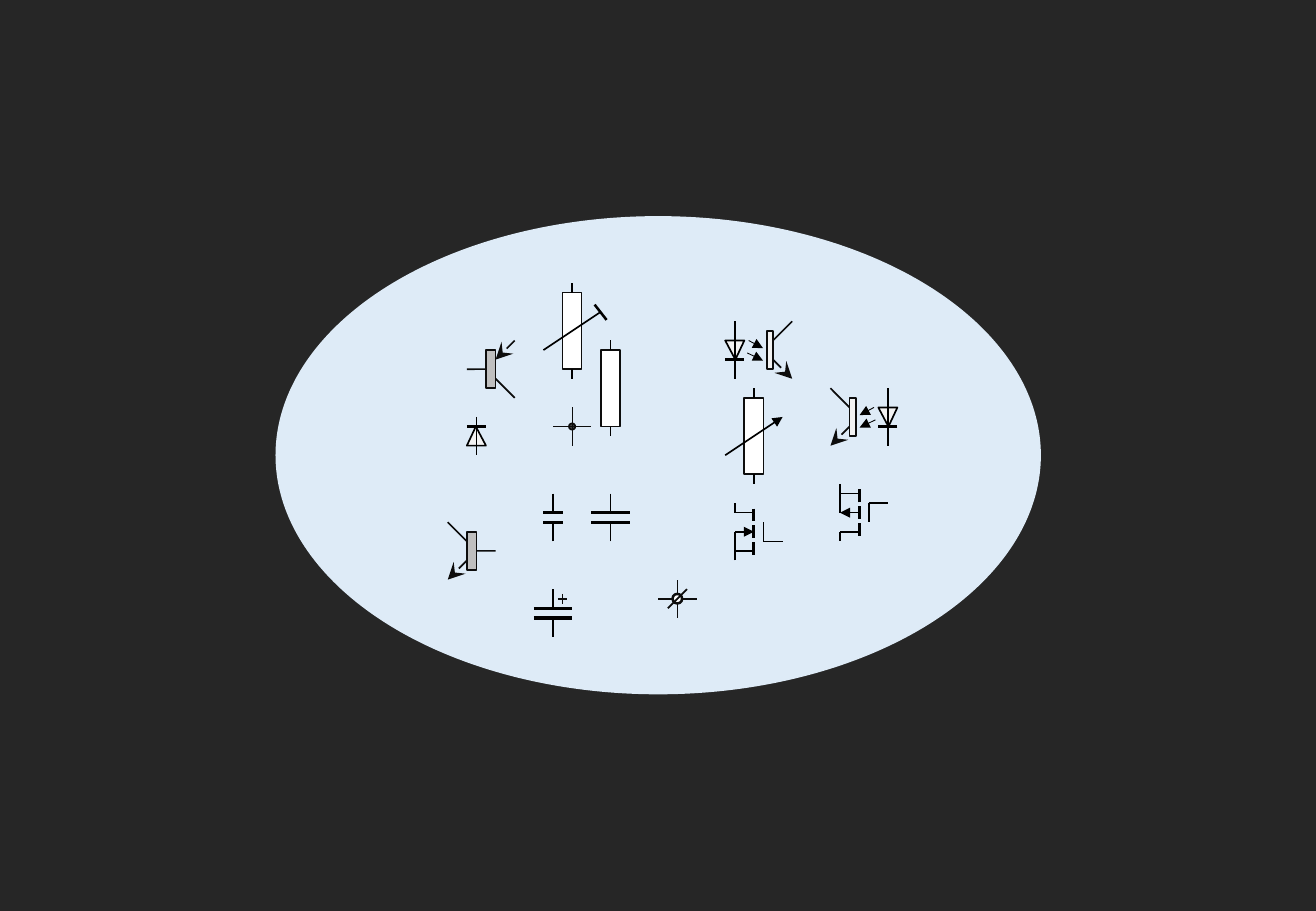
from lxml.etree import SubElement
from pptx import Presentation
from pptx.dml.color import RGBColor
from pptx.enum.shapes import MSO_CONNECTOR, MSO_SHAPE
from pptx.oxml.ns import qn
from pptx.util import Cm, Pt

COLORS = {
    "background": "262626",
    "panel": "DEEBF7",
    "black": "000000",
    "ink": "0D0D0D",
    "white": "FFFFFF",
    "pale": "F2F2F2",
    "gray": "BFBFBF",
    "dot": "404040",
}
GRID = 0.2
OFFSET_X, OFFSET_Y = 0.16, 0.12
TOP, LEFT, BOTTOM, RIGHT = range(4)


def color(name):
    """Return the named colour."""
    return RGBColor.from_string(COLORS[name])


class Symbol:
    """A group of lines and shapes placed in grid steps around an origin."""

    def __init__(self, slide, column, row, flip_x=1, flip_y=1):
        """Start an empty group at a grid position."""
        self.shapes = slide.shapes.add_group_shape().shapes
        self.column, self.row = column, row
        self.flip_x, self.flip_y = flip_x, flip_y

    def point(self, x, y):
        """Convert grid steps from the origin into slide lengths."""
        return (Cm(OFFSET_X + GRID * (self.column + self.flip_x * x)),
                Cm(OFFSET_Y + GRID * (self.row + self.flip_y * y)))

    def line(self, start, end, width=1, ink="black", head=None, tail=None, size="med"):
        """Draw a straight line with optional arrowheads."""
        connector = self.shapes.add_connector(
            MSO_CONNECTOR.STRAIGHT, *self.point(*start), *self.point(*end))
        connector.line.width = Pt(width)
        connector.line.color.rgb = color(ink)
        properties = connector.line._get_or_add_ln()
        for tag, kind in (("a:headEnd", head), ("a:tailEnd", tail)):
            if kind:
                SubElement(properties, qn(tag), type=kind, w=size, len=size)
        SubElement(connector._element.spPr, qn("a:effectLst"))
        return connector

    def shape(self, kind, start, end, fill, ink="ink", width=1):
        """Draw an outlined shape between two opposite corners."""
        first, second = self.point(*start), self.point(*end)
        left, right = sorted((first[0], second[0]))
        top, bottom = sorted((first[1], second[1]))
        shape = self.shapes.add_shape(kind, left, top, right - left, bottom - top)
        shape.shadow.inherit = False
        shape.fill.solid()
        shape.fill.fore_color.rgb = color(fill)
        shape.line.color.rgb = color(ink)
        shape.line.width = Pt(width)
        return shape


def draw_panel(slide):
    """Draw the pale ellipse behind the symbols."""
    panel = slide.shapes.add_shape(MSO_SHAPE.OVAL, Cm(5.76), Cm(4.52), Cm(16), Cm(10))
    panel.shadow.inherit = False
    panel.fill.solid()
    panel.fill.fore_color.rgb = color("panel")
    panel.line.fill.background()


def draw_resistor(symbol):
    """Draw a resistor with joined leads."""
    body = symbol.shape(MSO_SHAPE.RECTANGLE, (-1, -4), (1, 4), "white")
    symbol.line((0, -5), (0, -4)).end_connect(body, TOP)
    symbol.line((0, 5), (0, 4)).end_connect(body, BOTTOM)


def draw_potentiometer(symbol):
    """Draw a resistor crossed by an adjusting arrow."""
    draw_resistor(symbol)
    symbol.line((-3, 2), (3, -2), tail="triangle")


def draw_trimmer(symbol):
    """Draw a resistor crossed by a preset adjuster."""
    draw_resistor(symbol)
    symbol.line((-3, 2), (3, -2))
    symbol.line((2.35, -2.75), (3.6, -1.15), width=1.5)


def draw_capacitor(symbol, half_width, polarized=False):
    """Draw two plates with leads, and a plus sign when polarized."""
    for plate, lead_end in ((0, -2), (1, 3)):
        symbol.line((-half_width, plate), (half_width, plate), width=2)
        symbol.line((0, lead_end), (0, plate))
    if polarized:
        symbol.line((1, -1.5), (1, -0.5), ink="ink")
        symbol.line((0.5, -1), (1.5, -1), ink="ink")


def draw_diode(symbol, bar, base, lead):
    """Draw a diode whose triangle points from its base to the bar."""
    triangle = symbol.shape(MSO_SHAPE.ISOSCELES_TRIANGLE, (-1, bar), (1, base),
                            "pale", ink="black")
    triangle.adjustments[0] = 0.47
    if base < bar:
        triangle.rotation = 180
    symbol.line((-1, bar), (1, bar), width=2)
    symbol.line((0, min(bar, base) - lead), (0, max(bar, base) + lead))


def draw_transistor_body(symbol, edge, side, width, fill, arrow="head"):
    """Draw the slanted collector and emitter and the base bar."""
    outer = edge + 2 * side
    symbol.line((outer, -3), (edge, -1), ink="ink")
    symbol.line((outer, 3), (edge, 1), ink="ink", size="lg", **{arrow: "stealth"})
    return symbol.shape(MSO_SHAPE.RECTANGLE, (edge, -2), (edge - side * width, 2), fill)


def draw_transistor(symbol, arrow):
    """Draw a bipolar transistor with a base lead."""
    body = draw_transistor_body(symbol, 0, -1, 1, "gray", arrow)
    lead = symbol.line((1, 0), (3, 0), ink="ink")
    lead.begin_connect(body, RIGHT if symbol.flip_x > 0 else LEFT)


def draw_optocoupler(symbol):
    """Draw a diode that shines on a phototransistor."""
    draw_diode(symbol, bar=1, base=-1, lead=2)
    draw_transistor_body(symbol, 4, 1, 0.65, "pale")
    symbol.line((1.45, -1), (2.95, -0.2), width=0.5, tail="triangle")
    symbol.line((1.3, 0.3), (2.95, 1.1), width=0.5, tail="triangle")


def draw_mosfet(symbol, arrow):
    """Draw a field-effect transistor with a broken channel."""
    for start, end in (((0, -2), (0, -3)), ((0, 3), (0, 0)), ((3, 1), (3, -1)),
                       ((0, 2), (2, 2)), ((0, -2), (2, -2)), ((3, 1), (5, 1))):
        symbol.line(start, end)
    for middle in (-1.75, 0, 1.75):
        symbol.line((2, middle - 0.67), (2, middle + 0.67), width=1.75)
    symbol.line((0, 0), (2, 0), **{arrow: "triangle"})


def draw_spokes(symbol, inner, outer, width):
    """Draw four lines outwards from a point."""
    for x, y in ((1, 0), (0, 1), (-1, 0), (0, -1)):
        symbol.line((x * inner, y * inner), (x * outer, y * outer), width, "ink")


def draw_junction(symbol):
    """Draw crossing wires joined by a dot."""
    symbol.shape(MSO_SHAPE.OVAL, (-0.33, -0.33), (0.33, 0.33), "dot")
    draw_spokes(symbol, 0, 2, 0.5)


def draw_terminal(symbol):
    """Draw a ring with four leads and a diagonal stroke."""
    symbol.shape(MSO_SHAPE.OVAL, (-0.5, -0.5), (0.5, 0.5), "white", width=1.5)
    symbol.line((1, -1), (-1, 1), ink="ink")
    draw_spokes(symbol, 0.5, 2, 1)


def main():
    """Build the slide of circuit symbols."""
    presentation = Presentation()
    presentation.slide_width, presentation.slide_height = Cm(27.51), Cm(19.05)
    slide = presentation.slides.add_slide(presentation.slide_layouts[6])
    slide.background.fill.solid()
    slide.background.fill.fore_color.rgb = color("background")

    draw_panel(slide)
    draw_transistor(Symbol(slide, 51, 38, flip_x=-1, flip_y=-1), arrow="tail")
    draw_capacitor(Symbol(slide, 63, 53), half_width=2)
    draw_mosfet(Symbol(slide, 76, 55), arrow="tail")
    draw_potentiometer(Symbol(slide, 78, 45))
    draw_trimmer(Symbol(slide, 59, 34))
    draw_diode(Symbol(slide, 49, 44), bar=0, base=2, lead=1)
    draw_capacitor(Symbol(slide, 57, 53), half_width=1)
    draw_capacitor(Symbol(slide, 57, 63), half_width=2, polarized=True)
    draw_resistor(Symbol(slide, 63, 40))
    draw_transistor(Symbol(slide, 48, 57), arrow="head")
    draw_optocoupler(Symbol(slide, 92, 43, flip_x=-1))
    draw_mosfet(Symbol(slide, 87, 53, flip_y=-1), arrow="head")
    draw_optocoupler(Symbol(slide, 76, 36))
    draw_junction(Symbol(slide, 59, 44))
    draw_terminal(Symbol(slide, 70, 62))
    presentation.save("out.pptx")


if __name__ == "__main__":
    main()
